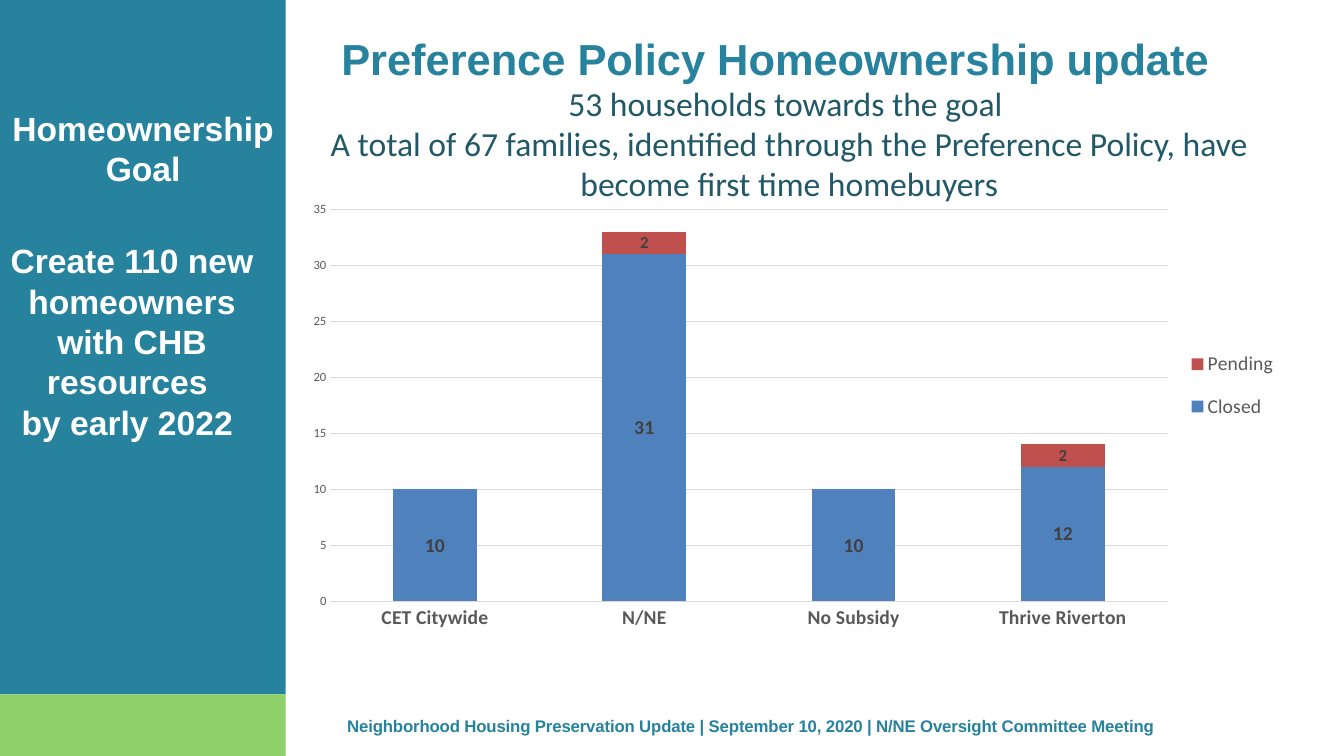
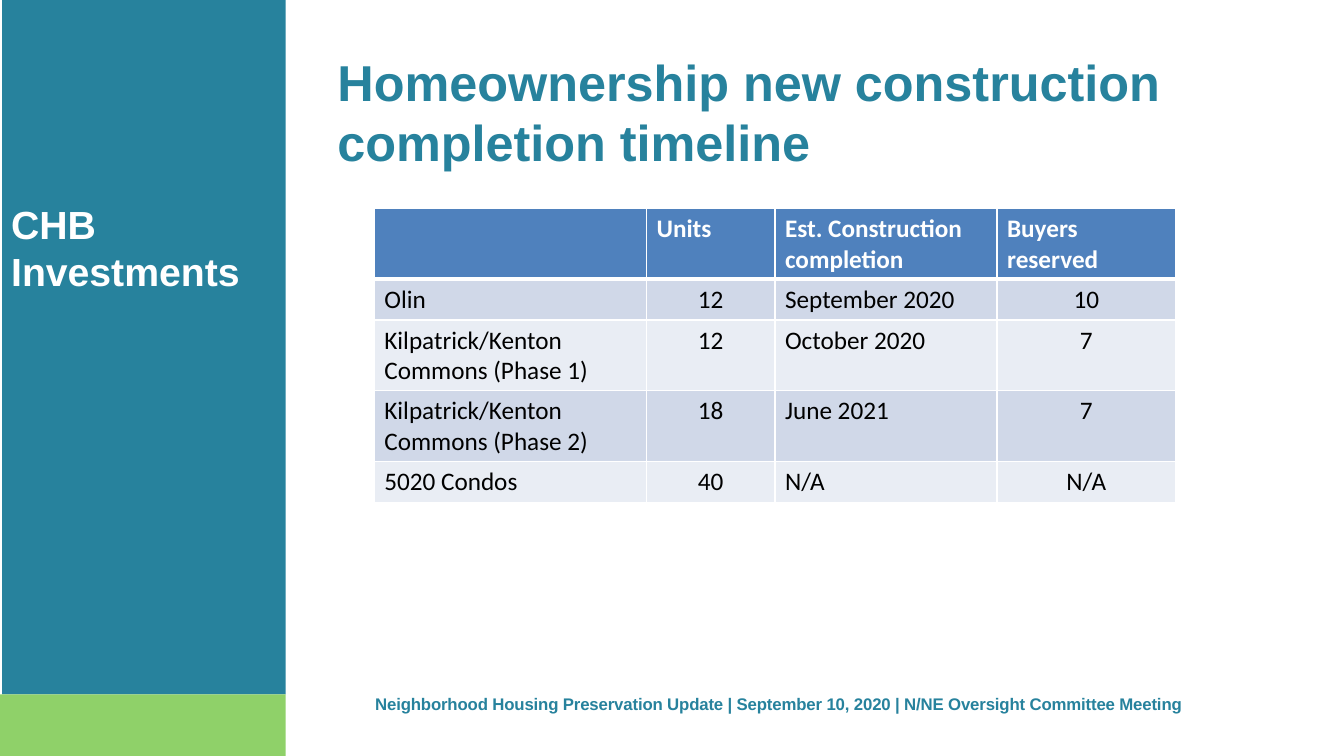
from lxml import etree
from pptx import Presentation
from pptx.chart.data import CategoryChartData
from pptx.dml.color import RGBColor
from pptx.enum import chart as ch, shapes, text
from pptx.oxml import ns
from pptx.util import Pt

COLORS = {
    "teal": "27829D", "green": "8FD169", "white": "FFFFFF", "black": "000000",
    "deep_teal": "215968", "blue": "4F81BD", "red": "C0504D", "axis": "595959",
    "label": "404040", "grid": "D9D9D9", "row_dark": "D0D8E8", "row_light": "E9EDF4",
}
LEFT, CENTER = text.PP_ALIGN.LEFT, text.PP_ALIGN.CENTER

# Content
FOOTER = ("Neighborhood Housing Preservation Update | September 10, 2020 | "
          "N/NE Oversight Committee Meeting")
GOAL_HEADING = ["Homeownership Goal"]
GOAL_TEXT = ["Create 110 new homeowners with CHB resources ", "by early 2022 "]
UPDATE_TITLE = ["Preference Policy Homeownership update"]
UPDATE_TEXT = [
    "53 households towards the goal ",
    "A total of 67 families, identified through the Preference Policy, "
    "have become first time homebuyers",
]
CATEGORIES = ["CET Citywide", "N/NE", "No Subsidy", "Thrive Riverton"]
SERIES = [  # name, values, colour, label size
    ("Closed", (10, 31, 10, 12), "blue", 14),
    ("Pending", (None, 2, None, 2), "red", 12),
]
INVESTMENTS_HEADING = ["CHB", "Investments"]
TIMELINE_TITLE = ["Homeownership new construction completion timeline"]
TIMELINE = [
    ("", "Units", "Est. Construction completion", "Buyers reserved"),
    ("Olin", "12", "September 2020", "10"),
    ("Kilpatrick/Kenton Commons (Phase 1)", "12", "October 2020", "7"),
    ("Kilpatrick/Kenton Commons (Phase 2)", "18", "June 2021", "7"),
    ("5020 Condos", "40", "N/A", "N/A"),
]
COLUMN_WIDTHS = (194.4, 91.8, 158.6, 127.6)
ROW_HEIGHTS = (50.4, 29.2, 50.4, 50.4, 29.2)
CENTERED_COLUMNS = (1, 3)

# Shared measures
PAGE_WIDTH, PAGE_HEIGHT = 960, 540
BAND_RIGHT, BAND_SPLIT = 204, 496


def rgb(name):
    return RGBColor.from_string(COLORS[name])


def style_font(font, size, color, bold=False, face="Calibri"):
    font.name, font.size, font.bold = face, Pt(size), bold
    font.color.rgb = rgb(color)


def add_text(page, place, lines, size, color, bold=True, face="Arial",
             align=LEFT, insets=(0, 0, 0, 0)):
    box = page.shapes.add_textbox(*map(Pt, place))
    frame = box.text_frame
    frame.word_wrap = True
    (frame.margin_left, frame.margin_top,
     frame.margin_right, frame.margin_bottom) = map(Pt, insets)
    for number, line in enumerate(lines):
        para = frame.add_paragraph() if number else frame.paragraphs[0]
        para.alignment = align
        span = para.add_run()
        span.text = line
        style_font(span.font, size, color, bold, face)
    return box


def add_band(page, left, top, bottom, color):
    band = page.shapes.add_shape(shapes.MSO_SHAPE.RECTANGLE, Pt(left), Pt(top),
                                 Pt(BAND_RIGHT - left), Pt(bottom - top))
    band.shadow.inherit = False
    band.fill.solid()
    band.fill.fore_color.rgb = rgb(color)
    band.line.fill.background()


def add_page(deck, band_left, footer_left, footer_top):
    """Add a page with the side bands and the footer."""
    page = deck.slides.add_slide(deck.slide_layouts[6])
    add_band(page, band_left, 0, BAND_SPLIT, "teal")
    add_band(page, 0, BAND_SPLIT, PAGE_HEIGHT, "green")
    footer = add_text(page, (footer_left, footer_top, 690, 14.2), [FOOTER], 12, "teal")
    para = footer.text_frame.paragraphs[0]
    para.line_spacing = Pt(14.2)
    para.runs[0].font._element.set("spc", "-10")
    return page


def set_layout(element, index, x, y, w, h, inner=False):
    """Fix the place of a chart part, in fractions of the chart."""
    for old in element.findall(ns.qn("c:layout")):
        element.remove(old)
    layout = etree.Element(ns.qn("c:layout"))
    manual = etree.SubElement(layout, ns.qn("c:manualLayout"))
    values = [("layoutTarget", "inner")] if inner else []
    values += [("xMode", "edge"), ("yMode", "edge"),
               ("x", x), ("y", y), ("w", w), ("h", h)]
    for tag, value in values:
        etree.SubElement(manual, ns.qn("c:" + tag)).set("val", str(value))
    element.insert(index, layout)


def add_homebuyer_chart(page):
    data = CategoryChartData()
    data.categories = CATEGORIES
    for name, values, _, _ in SERIES:
        data.add_series(name, values)
    chart = page.shapes.add_chart(ch.XL_CHART_TYPE.COLUMN_STACKED, Pt(207.5), Pt(140),
                                  Pt(712), Pt(318.2), data).chart
    chart.has_title = False
    style_font(chart.font, 10, "black")
    plot = chart.plots[0]
    plot.gap_width, plot.overlap, plot.vary_by_categories = 150, 100, False
    for series, (_, _, color, size) in zip(plot.series, SERIES):
        series.format.fill.solid()
        series.format.fill.fore_color.rgb = rgb(color)
        labels = series.data_labels
        labels.show_value = True
        labels.position = ch.XL_LABEL_POSITION.CENTER
        style_font(labels.font, size, "label", True)

    # Axes
    across, up = chart.category_axis, chart.value_axis
    for axis, size, bold in ((across, 14, True), (up, 9, False)):
        axis.major_tick_mark = axis.minor_tick_mark = ch.XL_TICK_MARK.NONE
        style_font(axis.tick_labels.font, size, "axis", bold)
    up.minimum_scale, up.maximum_scale, up.major_unit = 0, 35, 5
    up.format.line.fill.background()
    up.has_major_gridlines = True
    for line in (across.format.line, up.major_gridlines.format.line):
        line.color.rgb = rgb("grid")
        line.width = Pt(0.75)

    # Legend and plot places
    chart.has_legend = True
    legend = chart.legend
    legend.position = ch.XL_LEGEND_POSITION.RIGHT
    legend.include_in_layout = False
    style_font(legend.font, 14, "axis")
    set_layout(legend._element, 1, 0.89, 0.31, 0.11, 0.23)
    plot_area = chart._chartSpace.find(".//" + ns.qn("c:plotArea"))
    set_layout(plot_area, 0, 0.04, 0.03, 0.84, 0.88, inner=True)


def set_borders(cell, top, bottom):
    properties = cell._tc.get_or_add_tcPr()
    for index, (side, width) in enumerate(zip("LRTB", (1, 1, top, bottom))):
        line = etree.Element(ns.qn("a:ln" + side), w=str(Pt(width)))
        fill = etree.SubElement(line, ns.qn("a:solidFill"))
        etree.SubElement(fill, ns.qn("a:srgbClr"), val=COLORS["white"])
        properties.insert(index, line)


def add_timeline_table(page):
    table = page.shapes.add_table(
        len(TIMELINE), len(COLUMN_WIDTHS), Pt(267.4), Pt(149),
        Pt(sum(COLUMN_WIDTHS)), Pt(sum(ROW_HEIGHTS))).table
    for column, width in zip(table.columns, COLUMN_WIDTHS):
        column.width = Pt(width)
    for r, values in enumerate(TIMELINE):
        table.rows[r].height = Pt(ROW_HEIGHTS[r])
        header = r == 0
        fill = "blue" if header else ("row_light", "row_dark")[r % 2]
        for c, value in enumerate(values):
            cell = table.cell(r, c)
            cell.fill.solid()
            cell.fill.fore_color.rgb = rgb(fill)
            set_borders(cell, 3 if r == 1 else 1, 3 if header else 1)
            para = cell.text_frame.paragraphs[0]
            para.alignment = CENTER if c in CENTERED_COLUMNS and not header else LEFT
            if value:
                span = para.add_run()
                span.text = value
                style_font(span.font, 18, "white" if header else "black", header)


def main():
    deck = Presentation()
    deck.slide_width, deck.slide_height = Pt(PAGE_WIDTH), Pt(PAGE_HEIGHT)
    heading_insets, body_insets = (0, 5, 0, 0), (7.2, 3.6, 7.2, 3.6)

    # Homeownership goal
    page = add_page(deck, 0, 248, 511.5)
    add_text(page, (1.5, 72, 201.5, 117), GOAL_HEADING, 24, "white",
             align=CENTER, insets=heading_insets)
    add_text(page, (214.5, 23, 678, 54), UPDATE_TITLE, 31, "teal", align=CENTER)
    add_text(page, (206, 55.5, 715.5, 124), UPDATE_TEXT, 24, "deep_teal", bold=False,
             face="Calibri", align=CENTER, insets=body_insets)
    add_text(page, (-5.5, 168, 199.5, 174), GOAL_TEXT, 24, "white",
             align=CENTER, insets=body_insets)
    add_homebuyer_chart(page)

    # Construction timeline
    page = add_page(deck, 1.5, 268, 496)
    add_text(page, (8, 138, 196, 92), INVESTMENTS_HEADING, 28, "white",
             insets=heading_insets)
    title = add_text(page, (241, 35.5, 696, 88.5), TIMELINE_TITLE, 36, "teal",
                     insets=(0, 1, 0, 0))
    title.text_frame.paragraphs[0].space_before = Pt(1)
    add_timeline_table(page)

    deck.save("out.pptx")


if __name__ == "__main__":
    main()
